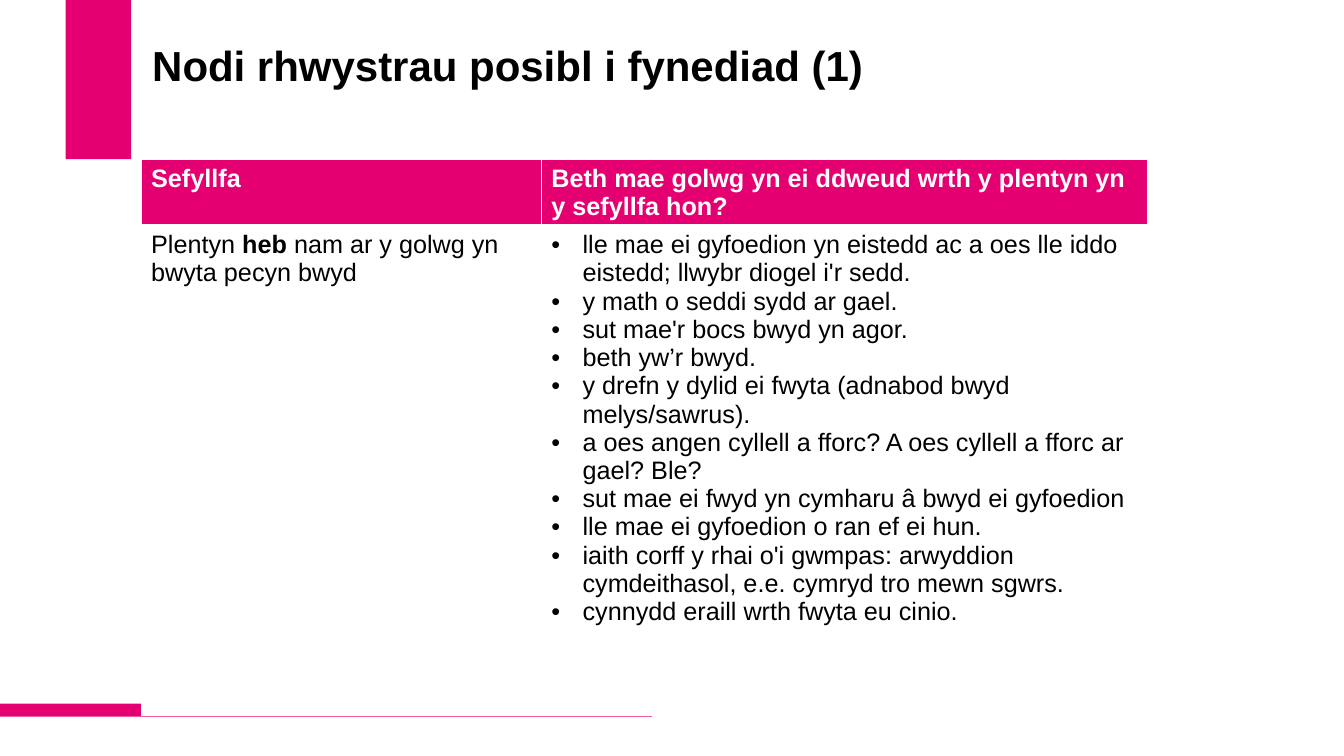
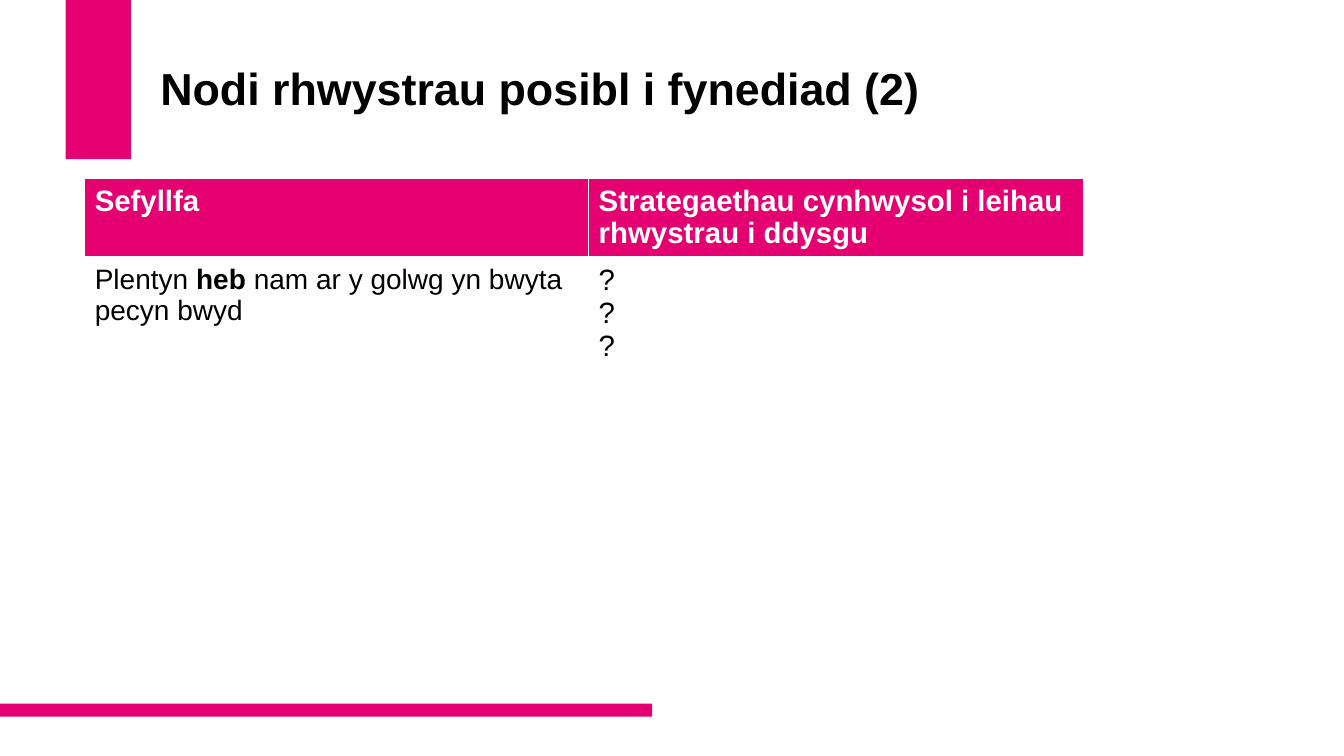
"""Build two Welsh-language slides on identifying barriers to access."""
from lxml import etree
from pptx import Presentation
from pptx.dml.color import RGBColor
from pptx.enum.shapes import MSO_SHAPE
from pptx.enum.text import MSO_ANCHOR, MSO_AUTO_SIZE, PP_ALIGN
from pptx.oxml.ns import qn
from pptx.util import Inches, Pt

RECTANGLE = MSO_SHAPE.RECTANGLE
MIDDLE = MSO_ANCHOR.MIDDLE
NO_AUTOFIT = MSO_AUTO_SIZE.NONE
LEFT = PP_ALIGN.LEFT

COLORS = {"accent": "E50071", "text": "000000", "paper": "FFFFFF"}
FONT = "Arial"
WIDTH, HEIGHT = Inches(13.333), Inches(7.5)
COL, ROW = WIDTH / 40, HEIGHT / 30
BANDS = [(1.95, 0, 1.95, 6.32), (0, 27.92, 19.41, 0.52)]
SITUATION = "Plentyn *heb* nam ar y golwg yn bwyta pecyn bwyd"

SLIDES = [
    {
        "title": "Nodi rhwystrau posibl i fynediad (1)",
        "title_box": (4.23, 0.64, 29.07, 5.88),
        "title_size": 30,
        "table_at": (4.2, 6.32),
        "columns": [11.91, 18.06],
        "rows": [2.6, 19.44],
        "inset": 0.05,
        "sizes": [[18, 18], [18, 18]],
        "bullets": True,
        "headings": ["Sefyllfa", "Beth mae golwg yn ei ddweud wrth y plentyn yn y sefyllfa hon?"],
        "answers": [
            "lle mae ei gyfoedion yn eistedd ac a oes lle iddo eistedd; llwybr diogel i'r sedd.",
            "y math o seddi sydd ar gael.",
            "sut mae'r bocs bwyd yn agor.",
            "beth yw’r bwyd.",
            "y drefn y dylid ei fwyta (adnabod bwyd melys/sawrus).",
            "a oes angen cyllell a fforc? A oes cyllell a fforc ar gael? Ble?",
            "sut mae ei fwyd yn cymharu â bwyd ei gyfoedion",
            "lle mae ei gyfoedion o ran ef ei hun.",
            "iaith corff y rhai o'i gwmpas: arwyddion cymdeithasol, e.e. cymryd tro mewn sgwrs.",
            "cynnydd eraill wrth fwyta eu cinio.",
        ],
    },
    {
        "title": "Nodi rhwystrau posibl i fynediad (2)",
        "title_box": (4.47, 1.6, 28.8, 5.8),
        "title_size": 32,
        "table_at": (2.52, 7.08),
        "columns": [15, 14.73],
        "rows": [3.16, 4.56] + [1.8] * 6,
        "inset": 0.06,
        "sizes": [[21, 21], [20, 21]],
        "bullets": False,
        "headings": ["Sefyllfa", "Strategaethau cynhwysol i leihau rhwystrau i ddysgu"],
        "answers": ["?"] * 3,
    },
]


def write(frame, lines, size, color="text", bold=False, bullets=False, spacing=1.0):
    """Fill a text frame; words between asterisks turn bold."""
    for index, line in enumerate(lines):
        paragraph = frame.add_paragraph() if index else frame.paragraphs[0]
        if bullets:
            props = paragraph._p.get_or_add_pPr()
            props.set("marL", str(Inches(0.31)))
            props.set("indent", str(-Inches(0.31)))
            etree.SubElement(props, qn("a:buFont")).set("typeface", FONT)
            etree.SubElement(props, qn("a:buChar")).set("char", "•")
        paragraph.alignment = LEFT
        paragraph.line_spacing = spacing
        for part, words in enumerate(line.split("*")):
            run = paragraph.add_run()
            run.text = words
            run.font.name = FONT
            run.font.size = Pt(size)
            run.font.bold = bold or part % 2 == 1
            run.font.color.rgb = RGBColor.from_string(COLORS[color])


def style_cell(cell, fill, inset, bottom_width):
    """Give a cell white borders, vertical insets and a solid fill."""
    props = cell._tc.get_or_add_tcPr()
    for side, points in (("lnL", 1), ("lnR", 1), ("lnT", 1), ("lnB", bottom_width)):
        line = etree.SubElement(props, qn(f"a:{side}"), w=str(Pt(points)))
        solid = etree.SubElement(line, qn("a:solidFill"))
        etree.SubElement(solid, qn("a:srgbClr")).set("val", COLORS["paper"])
    cell.margin_top = cell.margin_bottom = Inches(inset)
    cell.fill.solid()
    cell.fill.fore_color.rgb = RGBColor.from_string(COLORS[fill])


prs = Presentation()
prs.slide_width, prs.slide_height = WIDTH, HEIGHT
title_only = prs.slide_layouts[5]
slides = [prs.slides.add_slide(title_only) for _ in SLIDES]

for x, y, w, h in BANDS:
    band = slides[0].shapes.add_shape(
        RECTANGLE, int(x * COL), int(y * ROW), int(w * COL), int(h * ROW))
    band.shadow.inherit = False
    band.fill.solid()
    band.fill.fore_color.rgb = RGBColor.from_string(COLORS["accent"])
    band.line.fill.background()
    prs.slide_master.shapes.element.insert(2, band.element)

for slide, content in zip(slides, SLIDES):
    title = slide.shapes.title
    x, y, w, h = content["title_box"]
    title.left, title.top = int(x * COL), int(y * ROW)
    title.width, title.height = int(w * COL), int(h * ROW)
    heading = title.text_frame
    heading.word_wrap = True
    heading.auto_size = NO_AUTOFIT
    heading.vertical_anchor = MIDDLE
    heading.margin_bottom = Inches(0.5)
    write(heading, [content["title"]], content["title_size"], bold=True, spacing=0.9)

    x, y = content["table_at"]
    columns, rows = content["columns"], content["rows"]
    table = slide.shapes.add_table(
        len(rows), len(columns), int(x * COL), int(y * ROW),
        int(sum(columns) * COL), int(sum(rows) * ROW)).table
    table.first_row = True
    table.horz_banding = False
    for column, share in zip(table.columns, columns):
        column.width = int(share * COL)
    for index, share in enumerate(rows):
        table.rows[index].height = int(share * ROW)
        for cell in table.rows[index].cells:
            if index == 0:
                style_cell(cell, "accent", content["inset"], 3)
            else:
                style_cell(cell, "paper", content["inset"], 1)

    heading_sizes, body_sizes = content["sizes"]
    for index, text in enumerate(content["headings"]):
        write(table.cell(0, index).text_frame, [text], heading_sizes[index],
              color="paper", bold=True)
    write(table.cell(1, 0).text_frame, [SITUATION], body_sizes[0])
    write(table.cell(1, 1).text_frame, content["answers"], body_sizes[1],
          bullets=content["bullets"])

prs.save("out.pptx")
